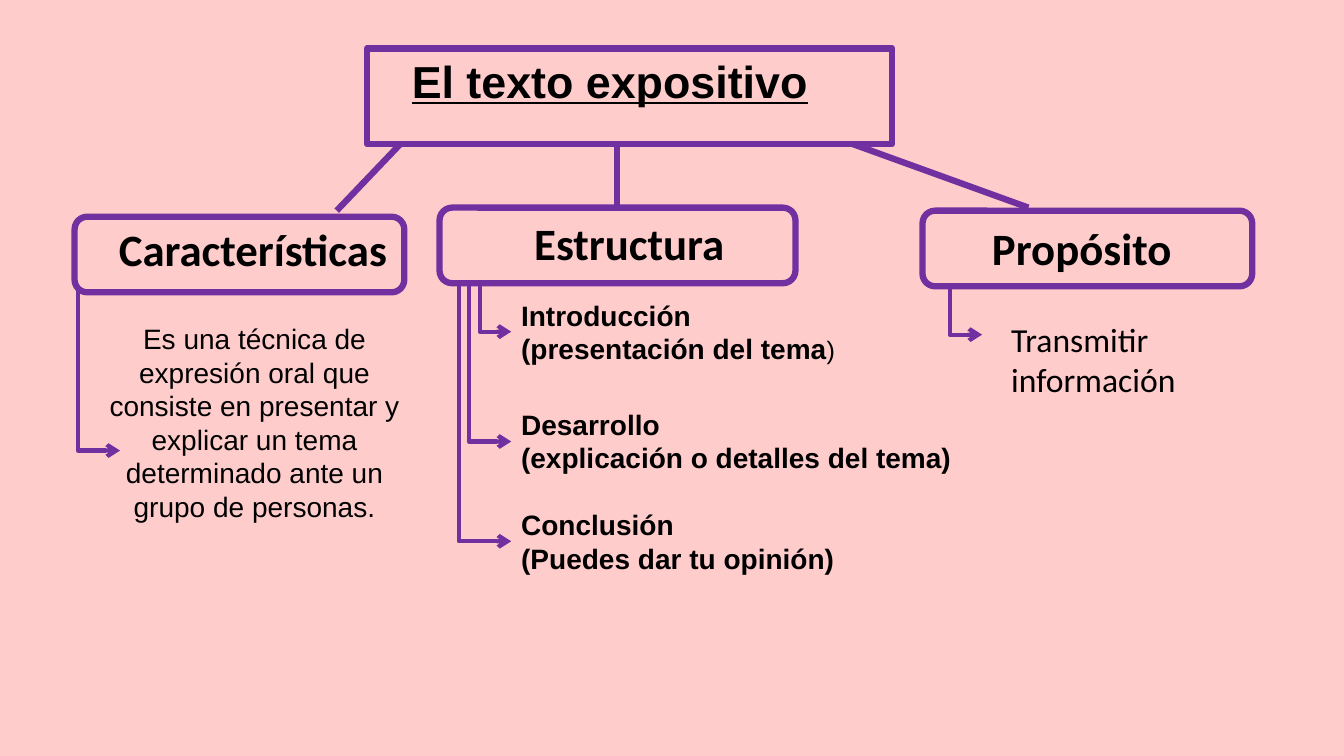
from lxml import etree
from pptx import Presentation
from pptx.dml.color import RGBColor
from pptx.enum.shapes import MSO_CONNECTOR, MSO_SHAPE
from pptx.enum.text import MSO_ANCHOR, MSO_AUTO_SIZE, PP_ALIGN
from pptx.oxml.ns import qn
from pptx.util import Inches, Pt

RECT, ROUNDED = MSO_SHAPE.RECTANGLE, MSO_SHAPE.ROUNDED_RECTANGLE
STRAIGHT, ELBOW = MSO_CONNECTOR.STRAIGHT, MSO_CONNECTOR.ELBOW
LEFT, CENTER = PP_ALIGN.LEFT, PP_ALIGN.CENTER
TOP, FIT = MSO_ANCHOR.TOP, MSO_AUTO_SIZE.SHAPE_TO_FIT_TEXT
TITLE_ONLY = 5

COLORS = {"background": "FFCCCC", "purple": "7030A0", "text": "000000"}
FRAME_WIDTH, ARROW_WIDTH = 4.5, 3

TITLE = "El texto expositivo"
TITLE_BOX = (3.97, 0.48, 4.16, 0.64)
TITLE_FONT = {"name": "Arial", "size": Pt(32), "bold": True, "underline": True}
HEADING_FONT = {"name": "Calibri", "size": Pt(32), "bold": True}
PART_FONT = {"name": "Arial", "size": Pt(20), "bold": True}
BRACKET_FONT = {"name": "Arial", "size": Pt(18), "bold": False}
FEATURE_FONT = {"name": "Arial", "size": Pt(20)}
PURPOSE_FONT = {"name": "Calibri", "size": Pt(24)}

HEADINGS = [  # text, box
    ("Propósito", (9.74, 2.14, 2.1, 0.64)),
    ("Características", (1.08, 2.15, 2.89, 0.64)),
    ("Estructura", (5.2, 2.09, 2.1, 0.64)),
]
PARTS_LEFT, PARTS_HEIGHT = 5.07, 0.77
PARTS = [  # name, detail, unbolded ending, top, width
    ("Introducción", "(presentación del tema", ")", 2.91, 3.34),
    ("Desarrollo", "(explicación o detalles del tema)", "", 3.99, 4.5),
    ("Conclusión", "(Puedes dar tu opinión)", "", 4.99, 3.41),
]
FEATURE = ("Es una técnica de expresión oral que consiste en presentar y "
           "explicar un tema determinado ante un grupo de personas.")
FEATURE_BOX = (0.94, 3.14, 3.17, 2.12)
PURPOSE = "Transmitir información"
PURPOSE_BOX = (9.93, 3.11, 2.61, 0.91)

FRAMES = [  # shape, box
    (RECT, (3.64, 0.48, 5.21, 0.95)),
    (ROUNDED, (0.74, 2.15, 3.27, 0.75)),
    (ROUNDED, (4.36, 2.06, 3.53, 0.75)),
    (ROUNDED, (9.15, 2.09, 3.27, 0.75)),
]
ARROWS = [  # start x, start y, end x, end y: down, then right
    (4.76, 2.84, PARTS_LEFT, 3.29),
    (4.65, 2.79, PARTS_LEFT, 4.38),
    (4.55, 2.79, PARTS_LEFT, 5.37),
    (9.42, 2.87, 9.74, 3.32),
    (0.77, 2.89, 1.19, 4.47),
]
BRANCHES = [
    (3.97, 1.43, 3.34, 2.09),
    (6.12, 1.43, 6.12, 2.06),
    (8.46, 1.43, 10.2, 2.06),
]


def inches(values):
    return [Inches(v) for v in values]


def rgb(name):
    return RGBColor.from_string(COLORS[name])


def fill_text(sp, paragraphs, align=LEFT, wrap=False):
    """Write paragraphs, each a list of (text, font values) runs."""
    tf = sp.text_frame
    tf.word_wrap, tf.auto_size, tf.vertical_anchor = wrap, FIT, TOP
    for i, runs in enumerate(paragraphs):
        p = tf.add_paragraph() if i else tf.paragraphs[0]
        p.alignment = align
        for text, font in runs:
            r = p.add_run()
            r.text = text
            r.font.color.rgb = rgb("text")
            for key, value in font.items():
                setattr(r.font, key, value)


def add_text(slide, box, paragraphs, **options):
    fill_text(slide.shapes.add_textbox(*inches(box)), paragraphs, **options)


def add_frame(slide, kind, box):
    sp = slide.shapes.add_shape(kind, *inches(box))
    sp.shadow.inherit = False
    sp.fill.background()
    sp.line.color.rgb = rgb("purple")
    sp.line.width = Pt(FRAME_WIDTH)


def add_line(slide, kind, ends, width):
    line = slide.shapes.add_connector(kind, *inches(ends))
    line.line.color.rgb = rgb("purple")
    line.line.width = Pt(width)
    etree.SubElement(line._element.spPr, qn("a:effectLst"))
    return line


def add_arrow(slide, x1, y1, x2, y2):
    """Draw a one-bend connector, turned 270 degrees about its centre."""
    cx, cy = (x1 + x2) / 2, (y1 + y2) / 2
    dx, dy = (x2 - x1) / 2, (y2 - y1) / 2
    line = add_line(slide, ELBOW, (cx + dy, cy - dx, cx - dy, cy + dx), ARROW_WIDTH)
    spPr = line._element.spPr
    spPr.find(qn("a:xfrm")).set("rot", str(270 * 60000))
    spPr.find(qn("a:prstGeom")).set("prst", "bentConnector2")
    etree.SubElement(spPr.find(qn("a:ln")), qn("a:tailEnd"), type="arrow")


def main():
    prs = Presentation()
    prs.slide_width, prs.slide_height = Inches(13.33), Inches(7.5)
    slide = prs.slides.add_slide(prs.slide_layouts[TITLE_ONLY])
    slide.background.fill.solid()
    slide.background.fill.fore_color.rgb = rgb("background")

    title = slide.shapes.title
    title.left, title.top, title.width, title.height = inches(TITLE_BOX)
    fill_text(title, [[(TITLE, TITLE_FONT)]], align=CENTER)

    for text, box in HEADINGS:
        add_text(slide, box, [[(text, HEADING_FONT)]])
    add_text(slide, PURPOSE_BOX, [[(PURPOSE, PURPOSE_FONT)]], wrap=True)
    for name, detail, ending, top, width in PARTS:
        runs = [(detail, PART_FONT)]
        if ending:
            runs.append((ending, BRACKET_FONT))
        add_text(slide, (PARTS_LEFT, top, width, PARTS_HEIGHT),
                 [[(name, PART_FONT)], runs])
    add_text(slide, FEATURE_BOX, [[(FEATURE, FEATURE_FONT)]],
             align=CENTER, wrap=True)

    for kind, box in FRAMES:
        add_frame(slide, kind, box)
    for ends in ARROWS:
        add_arrow(slide, *ends)
    for ends in BRANCHES:
        add_line(slide, STRAIGHT, ends, FRAME_WIDTH)

    prs.save("out.pptx")


if __name__ == "__main__":
    main()
